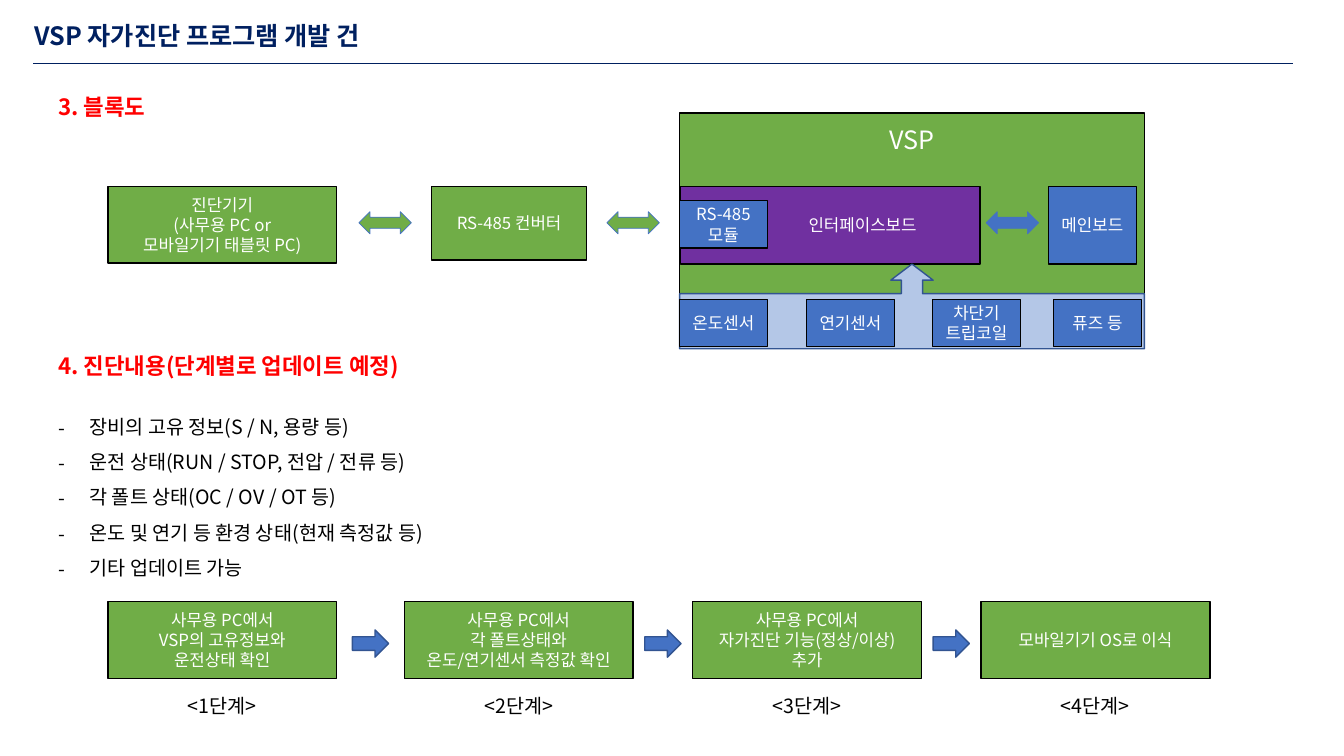
import dataclasses
import itertools

import lxml.etree
import pptx
import pptx.dml.color
import pptx.enum.shapes
import pptx.enum.text
import pptx.oxml.ns
import pptx.util

COLORS = {
    "navy": "002060", "red": "FF0000", "black": "000000", "white": "FFFFFF",
    "green": "70AD47", "blue": "4472C4", "purple": "7030A0",
    "pale_blue": "B4C7E7", "edge_blue": "325491",
}
FONT = "Noto Sans CJK KR"
CELL = pptx.util.Inches(0.1)
COLUMNS, ROWS = 133.3, 75
SHAPES = pptx.enum.shapes.MSO_SHAPE
ANCHOR = pptx.enum.text.MSO_ANCHOR
ALIGN = pptx.enum.text.PP_ALIGN


@dataclasses.dataclass(frozen=True)
class Area:
    column: float
    row: float
    columns: float
    rows: float

    def lengths(self) -> list[int]:
        return [round(value * CELL) for value in dataclasses.astuple(self)]


@dataclasses.dataclass(frozen=True)
class Block:
    area: Area
    fill: str
    text: str = ""
    kind: int = SHAPES.RECTANGLE
    line: str = "black"
    line_width: float = 1
    size: float = 12
    anchor: int = ANCHOR.MIDDLE
    left_inset: float = 1
    top_inset: float = 0.5
    adjustments: tuple[float, ...] = ()


@dataclasses.dataclass(frozen=True)
class Label:
    area: Area
    text: str
    size: float
    color: str
    bold: bool = False
    align: int = ALIGN.LEFT
    spacing: float = 1
    bullet: str = ""


def rgb(name: str) -> pptx.dml.color.RGBColor:
    return pptx.dml.color.RGBColor.from_string(COLORS[name])


def add_child(parent, tag: str, **attributes: str) -> None:
    child = lxml.etree.SubElement(parent, pptx.oxml.ns.qn(tag))
    for key, value in attributes.items():
        child.set(key, value)


def format_text(frame, size: float, color: str, bold: bool, align: int) -> None:
    frame.word_wrap = True
    for paragraph in frame.paragraphs:
        paragraph.alignment = align
        for span in paragraph.runs:
            span.font.size = pptx.util.Pt(size)
            span.font.bold = bold
            span.font.color.rgb = rgb(color)
            span.font.name = FONT
            add_child(span.font._element, "a:ea", typeface=FONT)


def draw_block(page, block: Block) -> None:
    box = page.shapes.add_shape(block.kind, *block.area.lengths())
    box.shadow.inherit = False
    box.fill.solid()
    box.fill.fore_color.rgb = rgb(block.fill)
    box.line.color.rgb = rgb(block.line)
    box.line.width = pptx.util.Pt(block.line_width)
    for index, value in enumerate(block.adjustments):
        box.adjustments[index] = value
    if block.text:
        frame = box.text_frame
        frame.text = block.text
        frame.vertical_anchor = block.anchor
        frame.margin_left = round(block.left_inset * CELL)
        frame.margin_top = round(block.top_inset * CELL)
        format_text(frame, block.size, "white", False, ALIGN.CENTER)


def draw_label(page, label: Label) -> None:
    frame = page.shapes.add_textbox(*label.area.lengths()).text_frame
    frame.text = label.text
    frame.auto_size = pptx.enum.text.MSO_AUTO_SIZE.SHAPE_TO_FIT_TEXT
    format_text(frame, label.size, label.color, label.bold, label.align)
    for paragraph in frame.paragraphs:
        paragraph.line_spacing = label.spacing
        if label.bullet:
            properties = paragraph._p.get_or_add_pPr()
            indent = round(3.1 * CELL)
            properties.set("marL", str(indent))
            properties.set("indent", str(-indent))
            add_child(properties, "a:buFont", typeface=FONT)
            add_child(properties, "a:buChar", char=label.bullet)


def draw_rule(page, left: float, right: float, row: float) -> None:
    rule = page.shapes.add_connector(
        pptx.enum.shapes.MSO_CONNECTOR.STRAIGHT,
        *Area(left, row, right, row).lengths())
    rule.line.color.rgb = rgb("navy")
    rule.line.width = pptx.util.Pt(0.5)
    add_child(rule._element.spPr, "a:effectLst")


def link(column: float, fill: str) -> Block:
    return Block(Area(column, 21, 5.2, 2.2), fill, kind=SHAPES.LEFT_RIGHT_ARROW,
                 line="blue", line_width=0.5)


LABELS = [
    Label(Area(2.4, 1.5, 83.8, 4), "VSP 자가진단 프로그램 개발 건", 18, "navy", True),
    Label(Area(4.8, 8.7, 18.3, 3.7), "3. 블록도", 16, "red", True),
    Label(Area(4.8, 34.4, 41.9, 3.7), "4. 진단내용(단계별로 업데이트 예정)", 16, "red", True),
    Label(Area(4.8, 39.5, 57.7, 18.7), "\n".join([
        "장비의 고유 정보(S / N, 용량 등)",
        "운전 상태(RUN / STOP, 전압 / 전류 등)",
        "각 폴트 상태(OC / OV / OT 등)",
        "온도 및 연기 등 환경 상태(현재 측정값 등)",
        "기타 업데이트 가능",
    ]), 14, "black", spacing=1.5, bullet="-"),
]

DIAGRAM = [
    Block(Area(42.8, 18.5, 15.4, 7.3), "green", "RS-485 컨버터"),
    link(35.6, "green"),
    Block(Area(10.7, 18.5, 22.7, 7.6), "green",
          "진단기기\n(사무용 PC or\n모바일기기 태블릿 PC)"),
    Block(Area(67.4, 11.2, 46.1, 23.2), "green", "VSP", size=18,
          anchor=ANCHOR.TOP, top_inset=1.1),
    link(60.2, "green"),
    Block(Area(104, 18.5, 8.7, 7.7), "blue", "메인보드"),
    link(97.8, "blue"),
    Block(Area(67.5, 18.5, 29.7, 7.7), "purple", "인터페이스보드", left_inset=7.4),
    Block(Area(67.4, 19.9, 8.7, 4.7), "blue", "RS-485 모듈"),
    Block(Area(67.4, 26.2, 46.1, 8.4), "pale_blue", kind=SHAPES.UP_ARROW_CALLOUT,
          line="edge_blue", adjustments=(0.25, 0.25, 0.19, 0.65)),
]

SENSORS = {67.4: "온도센서", 80: "연기센서", 92.5: "차단기\n트립코일", 104.5: "퓨즈 등"}

STEP_WIDTH, ARROW_WIDTH, CAPTION_WIDTH = 22.7, 3.6, 10.6
STEPS = {
    10.7: "사무용 PC에서\nVSP의 고유정보와\n운전상태 확인",
    40.1: "사무용 PC에서\n각 폴트상태와\n온도/연기센서 측정값 확인",
    68.7: "사무용 PC에서\n자가진단 기능(정상/이상) 추가",
    97.3: "모바일기기 OS로 이식",
}


def draw_steps(page) -> None:
    for number, (column, text) in enumerate(STEPS.items(), 1):
        draw_block(page, Block(Area(column, 59.7, STEP_WIDTH, 7.6), "green", text))
        caption = column + (STEP_WIDTH - CAPTION_WIDTH) / 2
        draw_label(page, Label(Area(caption, 67.2, CAPTION_WIDTH, 4.5),
                               f"<{number}단계>", 14, "black",
                               align=ALIGN.CENTER, spacing=1.5))
    for column, following in itertools.pairwise(STEPS):
        arrow = (column + STEP_WIDTH + following - ARROW_WIDTH) / 2
        draw_block(page, Block(Area(arrow, 62.5, ARROW_WIDTH, 2.7), "blue",
                               kind=SHAPES.RIGHT_ARROW, line="edge_blue"))


def main() -> None:
    deck = pptx.Presentation()
    deck.slide_width = round(COLUMNS * CELL)
    deck.slide_height = ROWS * CELL
    page = deck.slides.add_slide(deck.slide_layouts[6])
    draw_rule(page, 3.3, 128.2, 6.3)
    for label in LABELS:
        draw_label(page, label)
    for block in DIAGRAM:
        draw_block(page, block)
    for column, text in SENSORS.items():
        draw_block(page, Block(Area(column, 29.7, 8.7, 4.7), "blue", text))
    draw_steps(page)
    deck.save("out.pptx")


if __name__ == "__main__":
    main()
